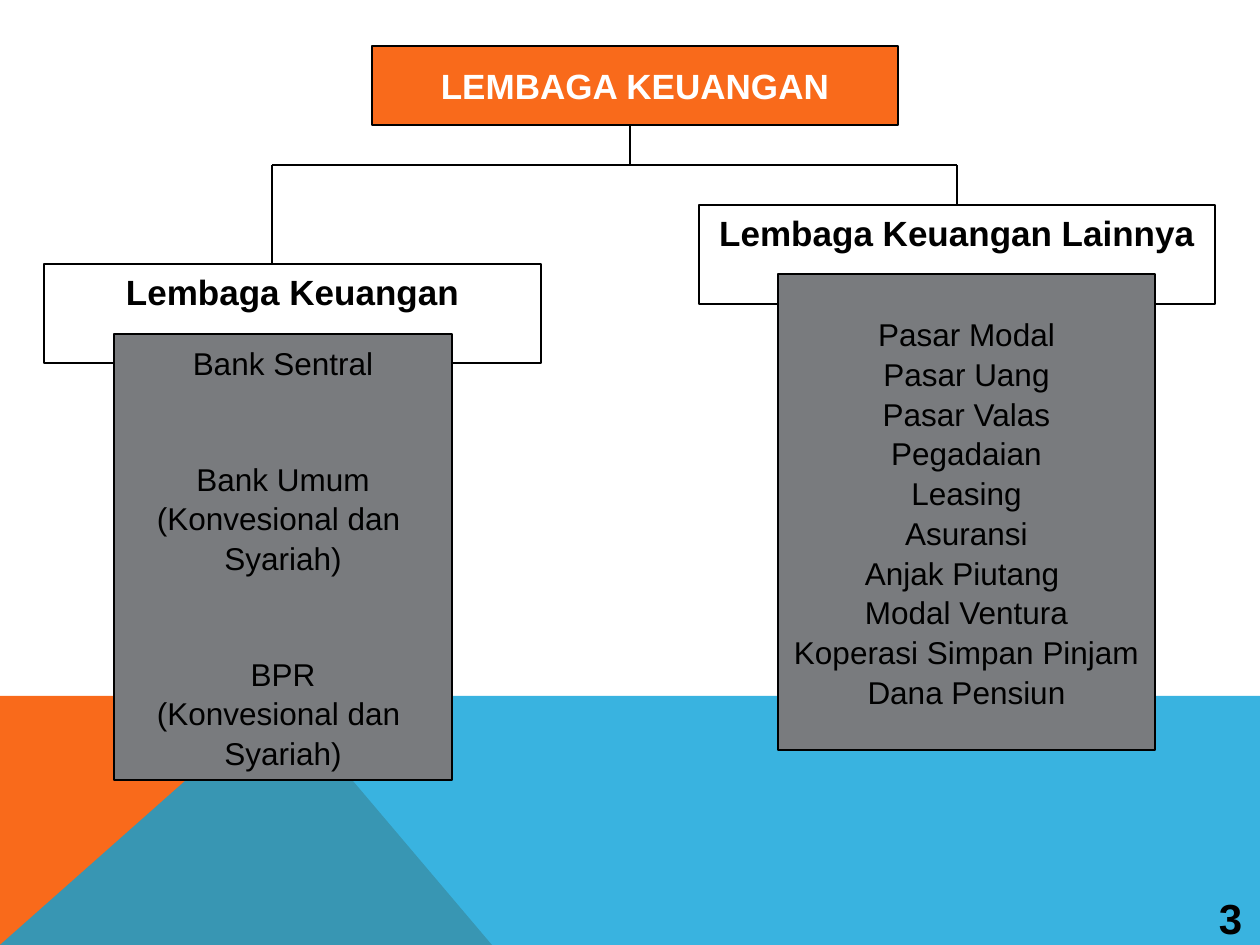
from lxml.etree import SubElement
from pptx import Presentation
from pptx.dml.color import RGBColor
from pptx.enum.shapes import MSO_CONNECTOR, MSO_SHAPE
from pptx.enum.text import MSO_ANCHOR, MSO_AUTO_SIZE, PP_ALIGN
from pptx.oxml.ns import qn
from pptx.util import Emu, Pt

BLACK = RGBColor(0x00, 0x00, 0x00)
WHITE = RGBColor(0xFF, 0xFF, 0xFF)
ORANGE = RGBColor(0xF9, 0x6A, 0x1B)
BLUE = RGBColor(0x08, 0xA1, 0xD9)
GRAY = RGBColor(0x79, 0x7B, 0x7E)

SCALE = 914400 / 126
BANKS = [
    ["Bank Sentral"],
    ["Bank Umum", "(Konvesional dan ", "Syariah)"],
    ["BPR", "(Konvesional dan ", "Syariah)"],
]
OTHERS = [[
    "Pasar Modal", "Pasar Uang", "Pasar Valas", "Pegadaian", "Leasing",
    "Asuransi", "Anjak Piutang ", "Modal Ventura",
    "Koperasi Simpan Pinjam", "Dana Pensiun",
]]


def px(n):
    return Emu(round(n * SCALE))


class Deck:
    """Slide under construction and the style shared by its elements."""

    font = "Arial"
    line_width = Pt(0.75)
    line_spacing = 1.05
    group_gap = Pt(43.4)

    def __init__(self, width, height):
        self.prs = Presentation()
        self.prs.slide_width, self.prs.slide_height = px(width), px(height)
        self.s = self.prs.slides.add_slide(self.prs.slide_layouts[5])

    def style(self, p, size, color, bold):
        p.alignment = PP_ALIGN.CENTER
        for r in p.runs:
            r.font.name, r.font.size, r.font.bold = self.font, Pt(size), bold
            r.font.color.rgb = color

    def label(self, sp, text, size, color=BLACK, anchor=MSO_ANCHOR.TOP):
        tf = sp.text_frame
        tf.text = text
        tf.word_wrap = True
        tf.auto_size = MSO_AUTO_SIZE.NONE
        tf.vertical_anchor = anchor
        self.style(tf.paragraphs[0], size, color, True)

    def outline(self, sp, fill=None):
        if fill is None:
            sp.fill.background()
        else:
            sp.fill.solid()
            sp.fill.fore_color.rgb = fill
        sp.line.color.rgb = BLACK
        sp.line.width = self.line_width

    def rect(self, x, y, w, h, fill=None):
        sp = self.s.shapes.add_shape(MSO_SHAPE.RECTANGLE, px(x), px(y), px(w), px(h))
        sp.shadow.inherit = False
        self.outline(sp, fill)
        return sp

    def title(self, text, x, y, w, h):
        sp = self.s.shapes.title
        sp.left, sp.top, sp.width, sp.height = px(x), px(y), px(w), px(h)
        self.outline(sp, ORANGE)
        self.label(sp, text, 20, WHITE, MSO_ANCHOR.MIDDLE)

    def heading(self, text, x, y, w, h):
        self.label(self.rect(x, y, w, h), text, 20)

    def members(self, groups, x, y, w, h):
        tf = self.rect(x, y, w, h, GRAY).text_frame
        tf.word_wrap = False
        tf.vertical_anchor = MSO_ANCHOR.MIDDLE
        tf.text = "\n".join(line for group in groups for line in group)
        paragraphs = iter(tf.paragraphs)
        for i, group in enumerate(groups):
            for j, _ in enumerate(group):
                p = next(paragraphs)
                p.line_spacing = self.line_spacing
                if i and not j:
                    p.space_before = self.group_gap
                self.style(p, 18, BLACK, False)

    def band(self, points, color, alpha=100):
        builder = self.s.shapes.build_freeform(*points[0], scale=SCALE)
        builder.add_line_segments(points[1:], close=True)
        sp = builder.convert_to_shape()
        sp.shadow.inherit = False
        sp.fill.solid()
        sp.fill.fore_color.rgb = color
        sp.line.fill.background()
        if alpha < 100:
            clr = sp._element.spPr.find(qn("a:solidFill"))[0]
            SubElement(clr, qn("a:alpha")).set("val", str(alpha * 1000))

    def line(self, x1, y1, x2, y2):
        c = self.s.shapes.add_connector(
            MSO_CONNECTOR.STRAIGHT, px(x1), px(y1), px(x2), px(y2))
        c.line.color.rgb = BLACK
        c.line.width = self.line_width
        SubElement(c._element.spPr, qn("a:effectLst"))

    def number(self, text, x, y, w, h):
        sp = self.s.shapes.add_textbox(px(x), px(y), px(w), px(h))
        self.label(sp, text, 24)


def main():
    deck = Deck(1260, 945)
    deck.band([(0, 945), (0, 696), (281, 696), (492, 945)], ORANGE)
    deck.band([(0, 945), (281, 696), (1260, 696), (1260, 945)], BLUE, 80)

    deck.title("LEMBAGA KEUANGAN", 372, 46, 526, 79)
    deck.heading("Lembaga Keuangan Lainnya", 699, 205, 516, 99)
    deck.heading("Lembaga Keuangan", 44, 264, 497, 99)
    deck.members(BANKS, 114, 334, 338, 446)
    deck.members(OTHERS, 778, 274, 377, 476)

    trunk, left, right, branch = 630, 272, 957, 165
    deck.line(trunk, 125, trunk, branch)
    deck.line(left, branch, right, branch)
    deck.line(left, branch, left, 264)
    deck.line(right, branch, right, 205)

    deck.number("3", 1196, 886, 69, 63)
    deck.prs.save("out.pptx")


if __name__ == "__main__":
    main()
